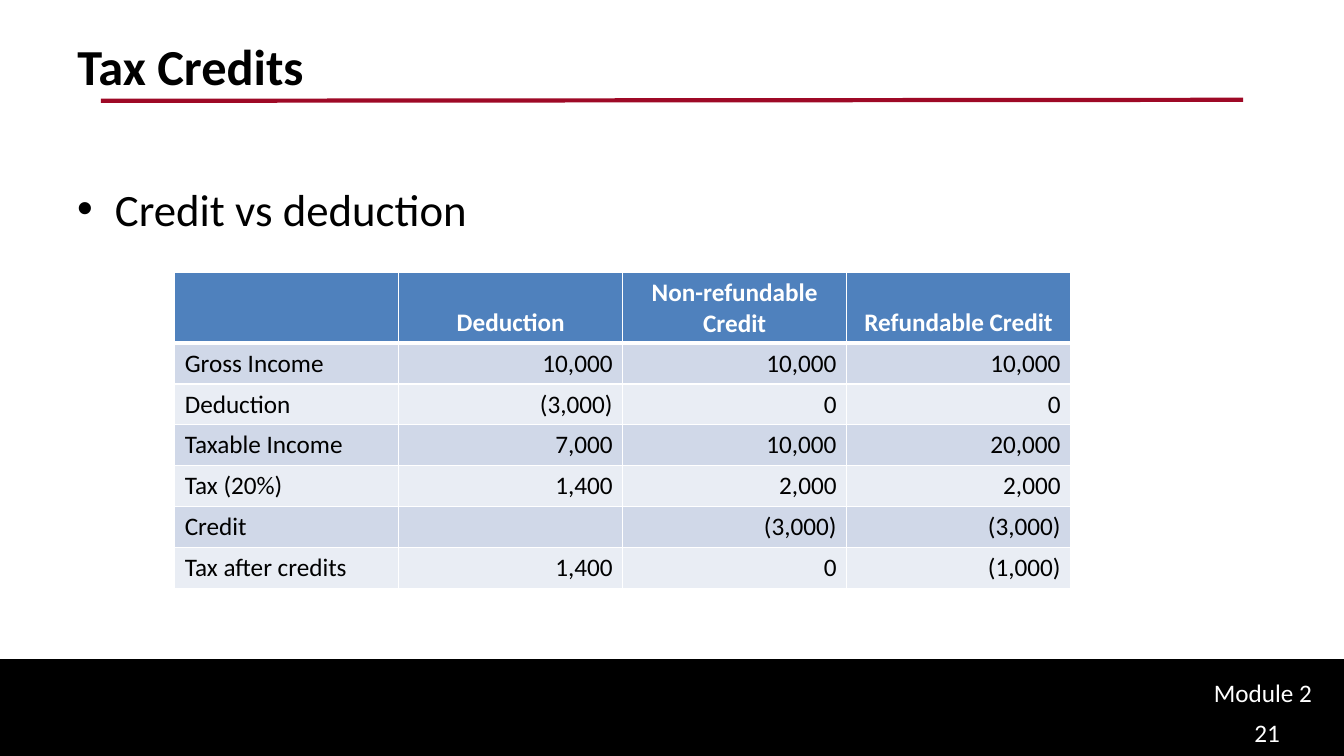
from lxml import etree
from pptx import Presentation
from pptx import util as u
from pptx.dml.color import RGBColor
from pptx.enum import shapes, text
from pptx.oxml import ns

Pt = u.Pt
INK = {"black": "000000", "white": "FFFFFF", "red": "9E0926",
       "head": "4F81BD", "odd": "D0D8E8", "even": "E9EDF4"}
ALIGN = text.PP_ALIGN
ROWS = [
    ("", "Deduction", "Non-refundable Credit", "Refundable Credit"),
    ("Gross Income", "10,000", "10,000", "10,000"),
    ("Deduction", "(3,000)", "0", "0"),
    ("Taxable Income", "7,000", "10,000", "20,000"),
    ("Tax (20%)", "1,400", "2,000", "2,000"),
    ("Credit", "", "(3,000)", "(3,000)"),
    ("Tax after credits", "1,400", "0", "(1,000)"),
]


def hue(name):
    return RGBColor.from_string(INK[name])


def paint(fill, name):
    fill.solid()
    fill.fore_color.rgb = hue(name)


def sub(node, tag, **attrs):
    return etree.SubElement(node, ns.qn(tag), attrs)


def write(frame, words, size, color="black", bold=False, align=ALIGN.LEFT):
    """Put one formatted run in the first paragraph and return the paragraph."""
    para = frame.paragraphs[0]
    para.alignment = align
    if words:
        run = para.add_run()
        run.text = words
        style = {"name": "Calibri", "size": Pt(size), "bold": bold}
        for key, value in style.items():
            setattr(run.font, key, value)
        run.font.color.rgb = hue(color)
    return para


def label(slide, box, words, size, color="black"):
    frame = slide.shapes.add_textbox(*map(Pt, box)).text_frame
    frame.word_wrap = True
    return write(frame, words, size, color)


def header(slide, box, words):
    left, top, width, height = box
    title = slide.shapes.title
    place = {"left": left, "top": top, "width": width, "height": height}
    for key, value in place.items():
        setattr(title, key, Pt(value))
    frame = title.text_frame
    frame.vertical_anchor = text.MSO_ANCHOR.TOP
    frame.auto_size = text.MSO_AUTO_SIZE.NONE
    write(frame, words, 36, bold=True)
    rule = slide.shapes.add_connector(
        shapes.MSO_CONNECTOR.STRAIGHT, Pt(left + 24), Pt(top + 50.4),
        Pt(left + width - 24), Pt(top + 49.7))
    rule.line.color.rgb = hue("red")
    rule.line.width = Pt(3)
    sub(rule.element.spPr, "a:effectLst")


def bullet(slide, box, words):
    para = label(slide, box, words, 32)
    props = para._p.get_or_add_pPr()
    props.set("marL", str(Pt(27)))
    props.set("indent", str(-Pt(27)))
    sub(props, "a:buFont", typeface="Arial")
    sub(props, "a:buChar", char="•")


def border(cell, widths):
    """Draw white edges; widths holds left, right, top and bottom in points."""
    props = cell._tc.get_or_add_tcPr()
    for spot, (side, width) in enumerate(zip("LRTB", widths)):
        edge = etree.Element(ns.qn("a:ln" + side), w=str(Pt(width)))
        sub(sub(edge, "a:solidFill"), "a:srgbClr", val=INK["white"])
        props.insert(spot, edge)


def grid(slide, box, rows):
    left, top, width, height = box
    first = 50
    table = slide.shapes.add_table(
        len(rows), len(rows[0]), *map(Pt, box)).table
    for col in table.columns:
        col.width = Pt(width / len(rows[0]))
    for r, row in enumerate(rows):
        head = r == 0
        table.rows[r].height = Pt(
            first if head else (height - first) / (len(rows) - 1))
        for c, words in enumerate(row):
            cell = table.cell(r, c)
            paint(cell.fill, "head" if head else "odd" if r % 2 else "even")
            border(cell, (1, 1, 3 if r == 1 else 1, 3 if head else 1))
            if head:
                cell.vertical_anchor = text.MSO_ANCHOR.BOTTOM
            align = ALIGN.CENTER if head else ALIGN.RIGHT if c else ALIGN.LEFT
            write(cell.text_frame, words, 18,
                  "white" if head else "black", head, align)


def footer(slide, box, module, number):
    left, top, width, height = box
    band = slide.shapes.add_shape(shapes.MSO_SHAPE.RECTANGLE, *map(Pt, box))
    band.shadow.inherit = False
    paint(band.fill, "black")
    band.line.color.rgb = hue("black")
    band.line.width = Pt(2)
    right = left + width
    label(slide, (right - 100, top + 8, 95, 29), module, 18, "white")
    label(slide, (right - 71, top + 37, 66, 30), number, 18, "white")


def main():
    deck = Presentation()
    deck.slide_width, deck.slide_height = Pt(960), Pt(540)
    slide = deck.slides.add_slide(deck.slide_layouts[5])
    footer(slide, (0, 472, 960, 68), "Module 2", "21")
    header(slide, (48, 21.6, 864, 90), "Tax Credits")
    bullet(slide, (48, 126, 864, 309), "Credit vs deduction")
    grid(slide, (124.8, 194.6, 640, 225.4), ROWS)
    deck.save("out.pptx")


if __name__ == "__main__":
    main()
